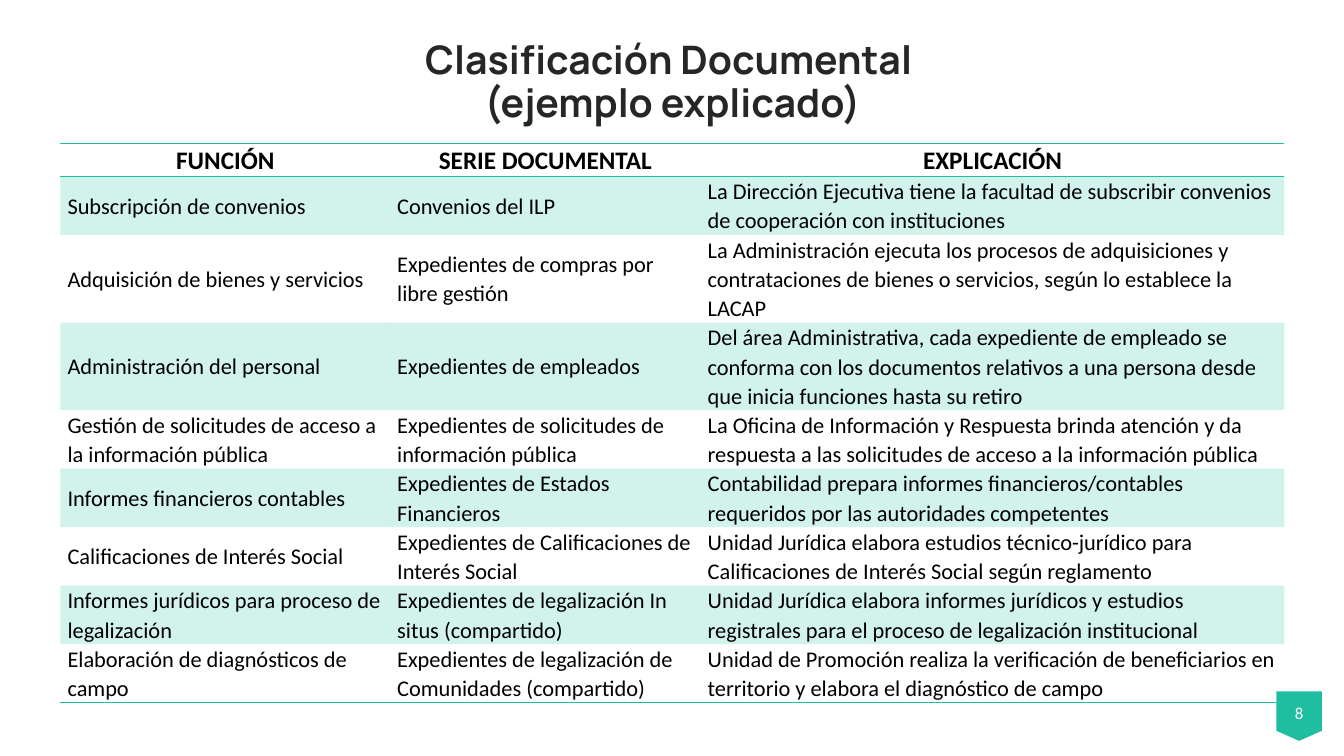
import pptx
import pptx.dml.color
import pptx.enum.shapes
import pptx.enum.text
import pptx.oxml
import pptx.oxml.ns
import pptx.util
from pptx.util import Inches

TEAL = "20BEA0"
CENTER = pptx.enum.text.PP_ALIGN.CENTER
MIDDLE = pptx.enum.text.MSO_ANCHOR.MIDDLE
TOP = pptx.enum.text.MSO_ANCHOR.TOP
SHAPES = pptx.enum.shapes.MSO_SHAPE
NO_GRID = "{2D5ABB26-0587-4C30-8999-92F81FD0307C}"

HEADS = ["FUNCIÓN", "SERIE DOCUMENTAL", "EXPLICACIÓN"]
WIDTHS = [3.27, 3.08, 5.79]
# Each row: lines of text, then function, series and explanation
ROWS = [
    (2, "Subscripción de convenios", "Convenios del ILP",
     "La Dirección Ejecutiva tiene la facultad de subscribir convenios de cooperación con instituciones"),
    (3, "Adquisición de bienes y servicios", "Expedientes de compras por libre gestión",
     "La Administración ejecuta los procesos de adquisiciones y contrataciones de bienes o servicios, "
     "según lo establece la LACAP"),
    (3, "Administración del personal", "Expedientes de empleados",
     "Del área Administrativa, cada expediente de empleado se conforma con los documentos relativos "
     "a una persona desde que inicia funciones hasta su retiro"),
    (2, "Gestión de solicitudes de acceso a la información pública",
     "Expedientes de solicitudes de información pública",
     "La Oficina de Información y Respuesta brinda atención y da respuesta a las solicitudes "
     "de acceso a la información pública"),
    (2, "Informes financieros contables", "Expedientes de Estados Financieros",
     "Contabilidad prepara informes financieros/contables requeridos por las autoridades competentes"),
    (2, "Calificaciones de Interés Social", "Expedientes de Calificaciones de Interés Social",
     "Unidad Jurídica elabora estudios técnico-jurídico para Calificaciones de Interés Social según reglamento"),
    (2, "Informes jurídicos para proceso de legalización",
     "Expedientes de legalización In situs (compartido)",
     "Unidad Jurídica elabora informes jurídicos y estudios registrales para el proceso "
     "de legalización institucional"),
    (2, "Elaboración de diagnósticos de campo",
     "Expedientes de legalización de Comunidades (compartido)",
     "Unidad de Promoción realiza la verificación de beneficiarios en territorio "
     "y elabora el diagnóstico de campo"),
]


def rgb(code):
    return pptx.dml.color.RGBColor.from_string(code)


def style(para, size, color, face="Calibri", bold=False, align=None, space=None):
    para.alignment = align
    para.line_spacing = space
    font = para.font
    font.name, font.size, font.bold = face, pptx.util.Pt(size), bold
    font.color.rgb = rgb(color)


def pad(frame, side=0):
    frame.margin_left = frame.margin_right = Inches(side)
    frame.margin_top = frame.margin_bottom = 0


def add_title(slide, text):
    title = slide.shapes.title
    title.left, title.top = Inches(1.93), Inches(0.4)
    title.width, title.height = Inches(9.48), Inches(0.85)
    frame = title.text_frame
    frame.text = text
    frame.vertical_anchor = MIDDLE
    pad(frame)
    style(frame.paragraphs[0], 28, "262626", "Manrope", True, CENTER, 0.9)


def add_plain(slide, kind, left, top, width, height):
    shape = slide.shapes.add_shape(kind, Inches(left), Inches(top), Inches(width), Inches(height))
    shape.shadow.inherit = False
    shape.fill.solid()
    shape.fill.fore_color.rgb = rgb(TEAL)
    shape.line.fill.background()
    return shape


def add_badge(slide, number):
    add_plain(slide, SHAPES.RECTANGLE, 12.66, 6.86, 0.45, 0.39)
    tip = add_plain(slide, SHAPES.ISOSCELES_TRIANGLE, 12.66, 7.25, 0.45, 0.1)
    tip.rotation = 180
    box = slide.shapes.add_textbox(Inches(12.53), Inches(6.92), Inches(0.71), Inches(0.3))
    box.text_frame.word_wrap = True
    box.text_frame.text = number
    style(box.text_frame.paragraphs[0], 12, "FFFFFF", align=CENTER)


def add_edge(cell, tag):
    line = pptx.oxml.parse_xml(
        f'<a:{tag} {pptx.oxml.ns.nsdecls("a")} w="12700"><a:solidFill>'
        f'<a:srgbClr val="{TEAL}"/></a:solidFill></a:{tag}>')
    cell._tc.get_or_add_tcPr().insert(0, line)


def tint(cell, percent):
    cell.fill.solid()
    cell.fill.fore_color.rgb = rgb(TEAL)
    color = cell._tc.tcPr.find(".//" + pptx.oxml.ns.qn("a:srgbClr"))
    alpha = pptx.oxml.parse_xml(f'<a:alpha {pptx.oxml.ns.nsdecls("a")} val="{percent * 1000}"/>')
    color.append(alpha)


def fill_cell(cell, text, size, bold, align, anchor):
    cell.text = text
    pad(cell, 0.07)
    cell.vertical_anchor = anchor
    style(cell.text_frame.paragraphs[0], size, "000000", bold=bold, align=align, space=1.07)


def add_grid(slide):
    heights = [0.33] + [0.29 * row[0] for row in ROWS]
    frame = slide.shapes.add_table(
        len(heights), len(WIDTHS), Inches(0.6), Inches(1.42),
        Inches(sum(WIDTHS)), Inches(sum(heights)))
    table = frame.table
    frame.element.find(".//" + pptx.oxml.ns.qn("a:tableStyleId")).text = NO_GRID
    for column, width in zip(table.columns, WIDTHS):
        column.width = Inches(width)
    for row, height in zip(table.rows, heights):
        row.height = Inches(height)

    # Header, then body rows with every other one tinted
    for col, head in enumerate(HEADS):
        cell = table.cell(0, col)
        fill_cell(cell, head, 18, True, CENTER, TOP)
        cell.fill.background()
        add_edge(cell, "lnB")
        add_edge(cell, "lnT")
    for num, (_, *texts) in enumerate(ROWS, 1):
        for col, text in enumerate(texts):
            cell = table.cell(num, col)
            fill_cell(cell, text, 16, False, None, TOP if col == 2 else MIDDLE)
            if num % 2:
                tint(cell, 20)
            else:
                cell.fill.background()
            if num == len(ROWS):
                add_edge(cell, "lnB")


def main():
    deck = pptx.Presentation()
    deck.slide_width, deck.slide_height = Inches(13.33), Inches(7.5)
    slide = deck.slides.add_slide(deck.slide_layouts[5])
    add_title(slide, "Clasificación Documental \v(ejemplo explicado)")
    add_badge(slide, "8")
    add_grid(slide)
    deck.save("out.pptx")


if __name__ == "__main__":
    main()
